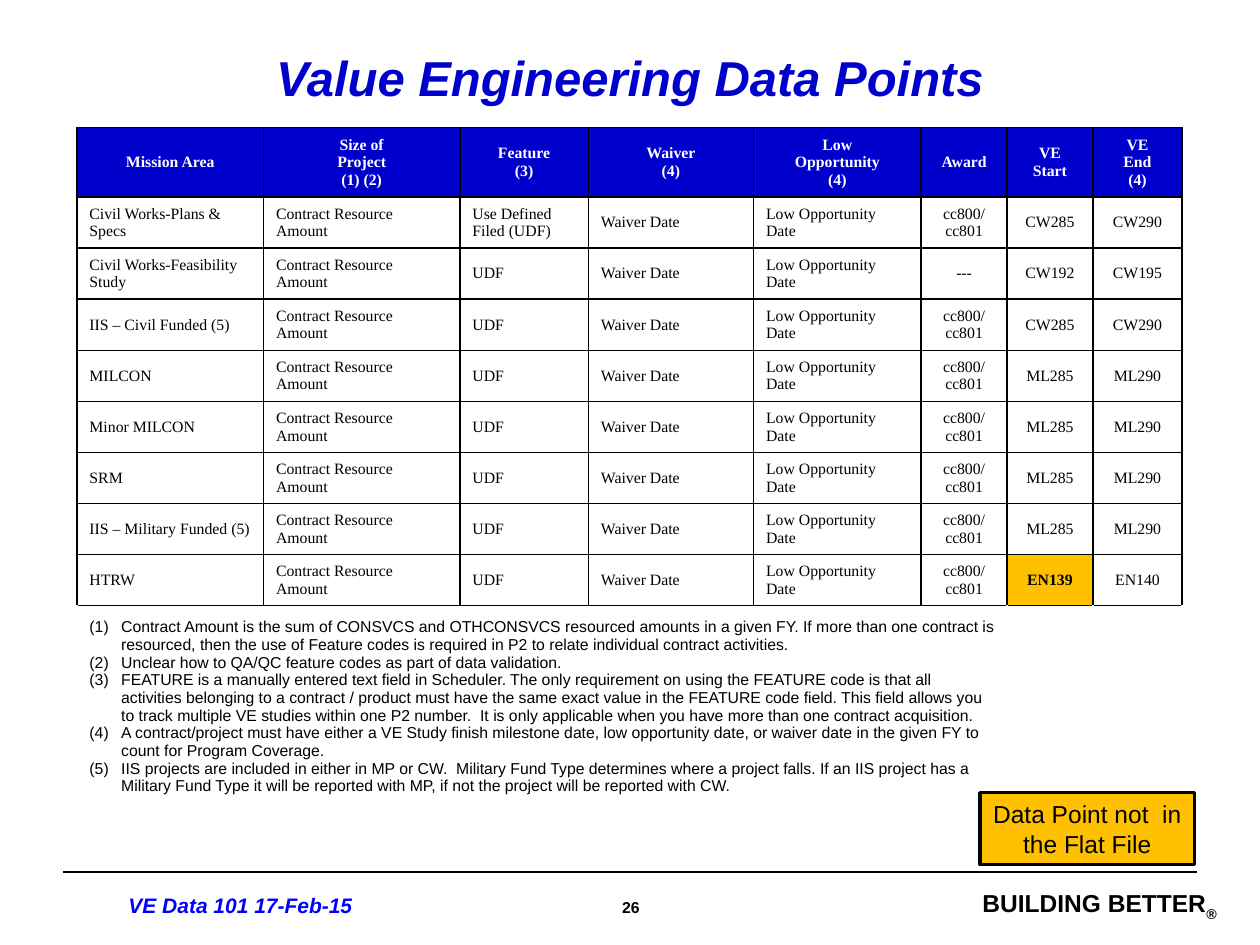
"""Build the Value Engineering Data Points slide."""
import lxml.etree
import pptx
import pptx.dml.color
import pptx.enum.shapes
import pptx.enum.text
import pptx.oxml
import pptx.oxml.ns
import pptx.util
from pptx.util import Cm

ALIGN = pptx.enum.text.PP_ALIGN
MIDDLE = pptx.enum.text.MSO_ANCHOR.MIDDLE
BLACK, WHITE, NAVY, AMBER = "000000", "FFFFFF", "0000CC", "FFC000"


def color(value):
    """Turn a hex string into a colour."""
    return pptx.dml.color.RGBColor.from_string(value)


def write(paragraph, text, size=9, font="Arial", fill=BLACK, bold=False,
          italic=False, align=ALIGN.LEFT, baseline=None):
    """Add one formatted run to a paragraph."""
    paragraph.alignment = align
    run = paragraph.add_run()
    run.text = text
    run.font.size = pptx.util.Pt(size)
    run.font.name = font
    run.font.bold = bold
    run.font.italic = italic
    run.font.color.rgb = color(fill)
    if baseline:
        run.font._element.set("baseline", str(baseline))


presentation = pptx.Presentation()
presentation.slide_width = Cm(25.4)
presentation.slide_height = Cm(19.05)
slide = presentation.slides.add_slide(presentation.slide_layouts[5])

title = slide.shapes.title
title.left, title.top, title.width, title.height = Cm(1.27), Cm(0.76), Cm(22.86), Cm(1.57)
title.text_frame.vertical_anchor = MIDDLE
write(title.text_frame.paragraphs[0], "Value Engineering Data Points", size=28,
      fill=NAVY, bold=True, italic=True, align=ALIGN.CENTER)

footer_line = slide.shapes.add_connector(
    pptx.enum.shapes.MSO_CONNECTOR.STRAIGHT, Cm(24.13), Cm(17.58), Cm(1.27), Cm(17.58))
footer_line.line.color.rgb = color(BLACK)
footer_line.line.width = pptx.util.Pt(0.75)
lxml.etree.SubElement(footer_line._element.spPr, pptx.oxml.ns.qn("a:effectLst"))

footers = [
    (2.34, 17.86, 5.59, 0.76, 0.25, [
        ("VE Data 101 17-Feb-15", dict(size=12, fill="0000FF", italic=True))]),
    (10.69, 17.98, 4.06, 0.64, 0.25, [("26", dict(align=ALIGN.CENTER))]),
    (19.48, 17.91, 5.05, 0.61, 0, [
        ("BUILDING BETTER", dict(size=14, align=ALIGN.RIGHT)),
        ("®", dict(size=14, align=ALIGN.RIGHT, baseline=-25000))]),
]
for left, top, width, height, margin, runs in footers:
    shape = slide.shapes.add_textbox(Cm(left), Cm(top), Cm(width), Cm(height))
    frame = shape.text_frame
    frame.word_wrap = True
    frame.margin_left = frame.margin_right = Cm(margin)
    frame.margin_top = frame.margin_bottom = Cm(margin / 2)
    for text, style in runs:
        write(frame.paragraphs[0], text, bold=True, **style)

headers = ["Mission Area", "Size of\nProject\n(1) (2)", "Feature\n(3)", "Waiver\n(4)",
           "Low\nOpportunity\n(4)", "Award", "VE\nStart", "VE\nEnd\n(4)"]
missions = [
    ("Civil Works-Plans & Specs", "CW285", "CW290"),
    ("Civil Works-Feasibility Study", "CW192", "CW195"),
    ("IIS – Civil Funded (5)", "CW285", "CW290"),
    ("MILCON", "ML285", "ML290"),
    ("Minor MILCON", "ML285", "ML290"),
    ("SRM", "ML285", "ML290"),
    ("IIS – Military Funded (5)", "ML285", "ML290"),
    ("HTRW", "EN139", "EN140"),
]
rows = [headers]
for mission, start, end in missions:
    feature = "Use Defined Filed (UDF)" if mission == missions[0][0] else "UDF"
    award = "---" if start == "CW192" else "cc800/ cc801"
    rows.append([mission, "Contract Resource Amount", feature, "Waiver Date",
                 "Low Opportunity Date", award, start, end])
notes = [
    "Contract Amount is the sum of CONSVCS and OTHCONSVCS resourced amounts in a given FY. "
    "If more than one contract is resourced, then the use of Feature codes is required in P2 "
    "to relate individual contract activities.",
    "Unclear how to QA/QC feature codes as part of data validation.",
    "FEATURE is a manually entered text field in Scheduler. The only requirement on using the "
    "FEATURE code is that all activities belonging to a contract / product must have the same "
    "exact value in the FEATURE code field. This field allows you to track multiple VE studies "
    "within one P2 number.  It is only applicable when you have more than one contract "
    "acquisition.",
    "A contract/project must have either a VE Study finish milestone date, low opportunity "
    "date, or waiver date in the given FY to count for Program Coverage.",
    "IIS projects are included in either in MP or CW.  Military Fund Type determines where a "
    "project falls. If an IIS project has a Military Fund Type it will be reported with MP, "
    "if not the project will be reported with CW.",
]

column_widths = [3.76, 3.96, 2.59, 3.33, 3.38, 1.73, 1.73, 1.8]
table = slide.shapes.add_table(len(rows) + 1, len(headers), Cm(1.55), Cm(2.57),
                               Cm(sum(column_widths)), Cm(10.3)).table
table.first_row = table.horz_banding = False
for column, width in zip(table.columns, column_widths):
    column.width = Cm(width)
for row in table.rows:
    row.height = Cm(1.03)

for row_index in range(len(rows) + 1):
    is_note_row = row_index == len(rows)
    for column_index in range(len(headers)):
        cell = table.cell(row_index, column_index)
        cell.vertical_anchor = MIDDLE
        for side in "T" if is_note_row else "LRTB":
            cell._tc.get_or_add_tcPr().append(pptx.oxml.parse_xml(
                f'<a:ln{side} {pptx.oxml.ns.nsdecls("a")} w="12700"><a:solidFill>'
                f'<a:srgbClr val="{BLACK}"/></a:solidFill></a:ln{side}>'))
        if is_note_row:
            cell.fill.background()
            continue
        text = rows[row_index][column_index]
        is_header, is_missing = row_index == 0, text == "EN139"
        cell.fill.solid()
        cell.fill.fore_color.rgb = color(NAVY if is_header else AMBER if is_missing else WHITE)
        for line_index, line in enumerate(text.split("\n")):
            frame = cell.text_frame
            paragraph = frame.add_paragraph() if line_index else frame.paragraphs[0]
            write(paragraph, line, font="Times New Roman",
                  fill=WHITE if is_header else BLACK, bold=is_header or is_missing,
                  align=ALIGN.CENTER if is_header or column_index > 4 else ALIGN.LEFT)

note_cell = table.cell(len(rows), 0)
note_cell.merge(table.cell(len(rows), 5))
for note_index, note in enumerate(notes):
    frame = note_cell.text_frame
    paragraph = frame.add_paragraph() if note_index else frame.paragraphs[0]
    paragraph.level = 1
    properties = paragraph._p.get_or_add_pPr()
    properties.set("marL", str(Cm(0.64)))
    properties.set("indent", str(-Cm(0.64)))
    lxml.etree.SubElement(properties, pptx.oxml.ns.qn("a:buFont"), typeface="Arial")
    lxml.etree.SubElement(properties, pptx.oxml.ns.qn("a:buAutoNum"), type="arabicParenBoth")
    write(paragraph, note)

callout = slide.shapes.add_shape(pptx.enum.shapes.MSO_SHAPE.RECTANGLE,
                                 Cm(19.76), Cm(15.98), Cm(4.32), Cm(1.45))
callout.shadow.inherit = False
callout.fill.solid()
callout.fill.fore_color.rgb = color(AMBER)
callout.line.color.rgb = color(BLACK)
callout.line.width = pptx.util.Pt(2)
callout.text_frame.word_wrap = True
callout.text_frame.margin_left = callout.text_frame.margin_right = Cm(0.2)
write(callout.text_frame.paragraphs[0], "Data Point not  in the Flat File", size=14,
      align=ALIGN.CENTER)

presentation.save("out.pptx")
